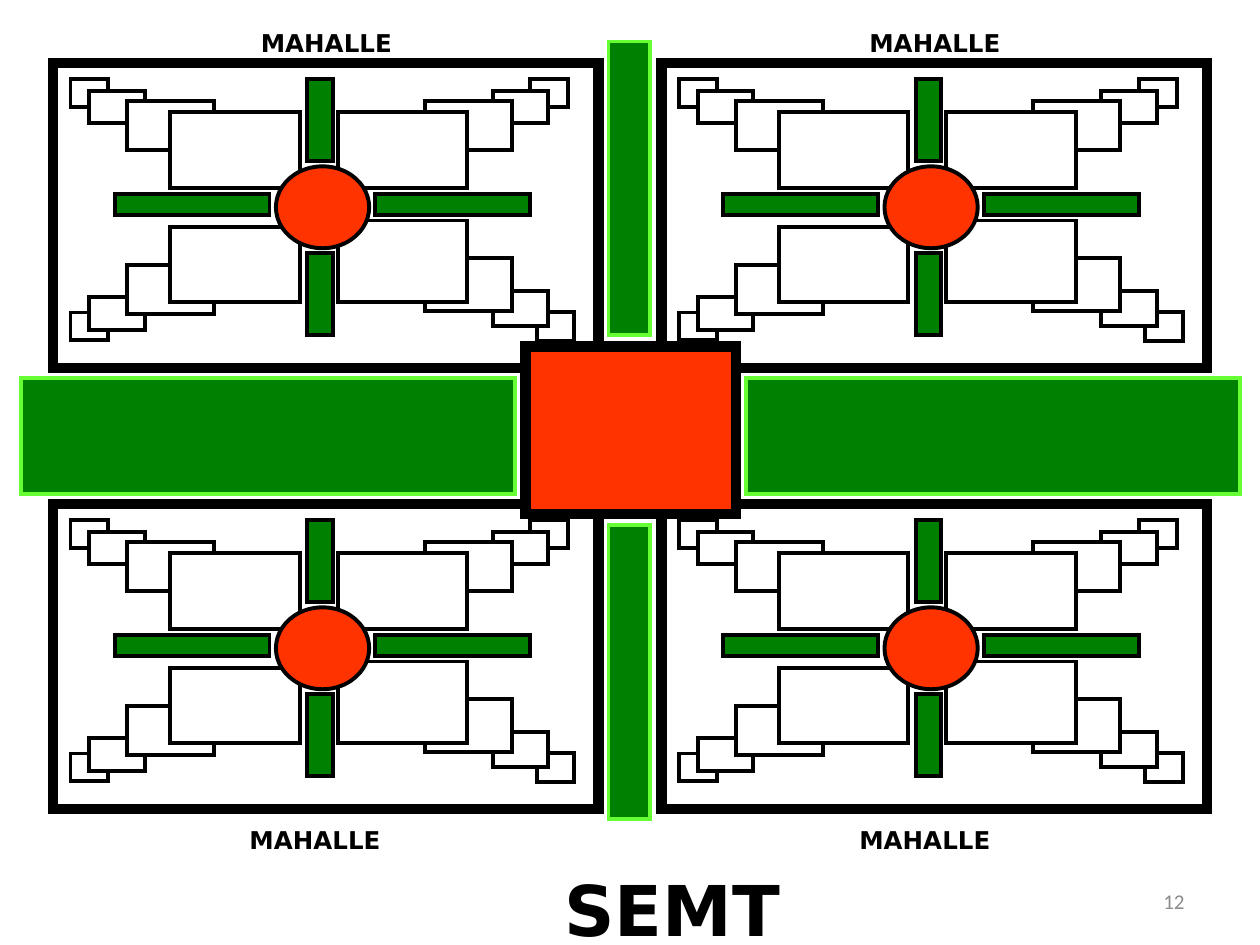
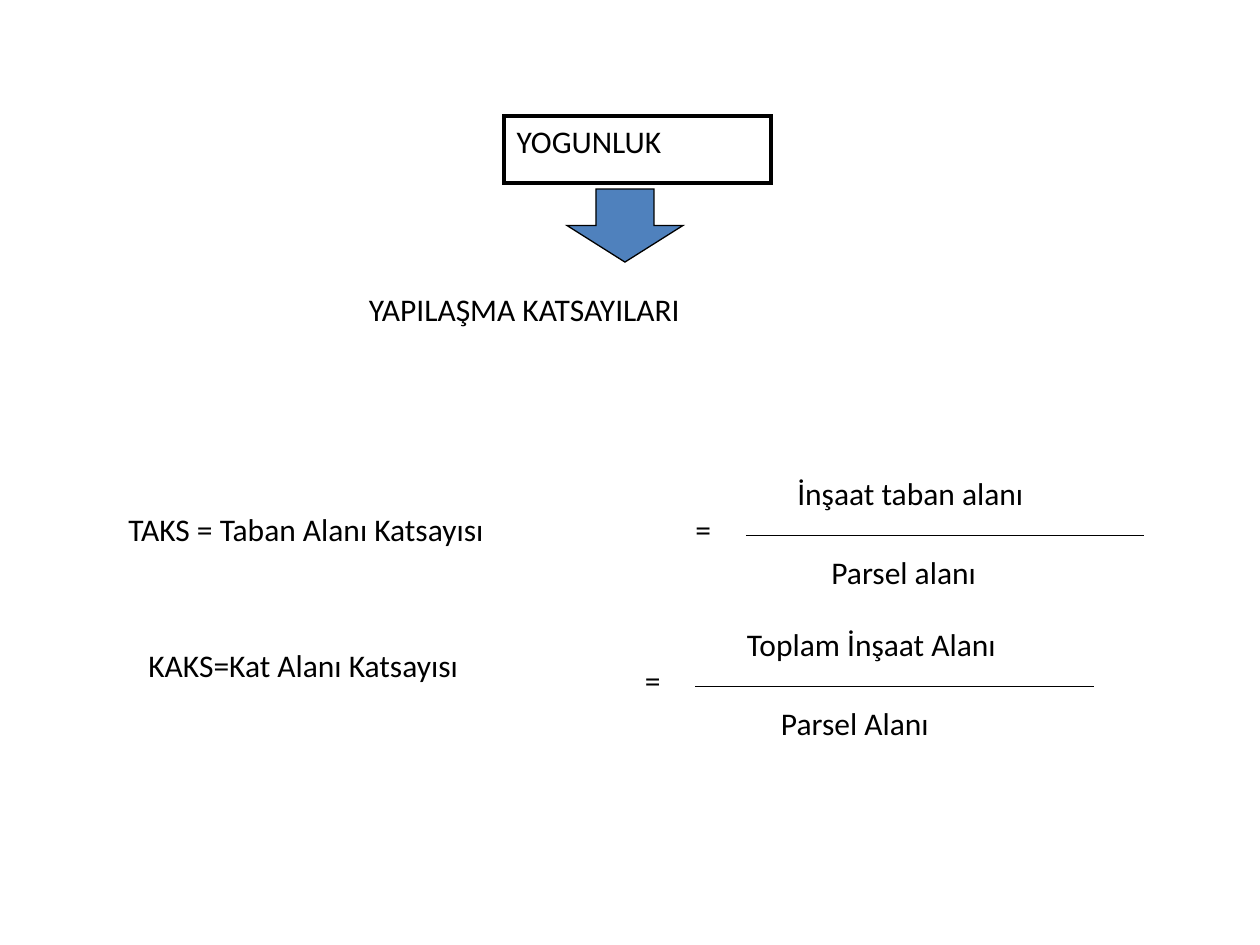
"""Build two planning slides: a district made of neighbourhoods, and building density ratios."""
from dataclasses import dataclass
from itertools import product

from pptx import Presentation
from pptx.dml.color import RGBColor
from pptx.enum.shapes import MSO_CONNECTOR, MSO_SHAPE
from pptx.enum.text import MSO_ANCHOR, MSO_AUTO_SIZE, PP_ALIGN
from pptx.oxml.ns import qn
from pptx.util import Inches, Pt


@dataclass(frozen=True)
class Theme:
    ink: RGBColor = RGBColor.from_string("000000")
    paper: RGBColor = RGBColor.from_string("FFFFFF")
    centre: RGBColor = RGBColor.from_string("FF3300")
    green: RGBColor = RGBColor.from_string("008000")
    green_edge: RGBColor = RGBColor.from_string("66FF33")
    arrow: RGBColor = RGBColor.from_string("4F81BD")
    muted: RGBColor = RGBColor.from_string("8C8C8C")
    body_font: str = "Calibri"
    map_font: str = "DejaVu Sans"
    district_size: int = 40
    label_size: int = 14
    body_size: int = 18
    number_size: int = 12
    hairline: float = 0.75
    outline: float = 2.25
    frame: float = 6


theme = Theme()


def draw(shapes, preset, at, fill, edge=theme.ink, weight=theme.outline):
    """Draw a preset shape with a sharp outline; a fill of None leaves it open."""
    shape = shapes.add_shape(preset, *map(Inches, at))
    shape.shadow.inherit = False
    if fill is None:
        shape.fill.background()
    else:
        shape.fill.solid()
        shape.fill.fore_color.rgb = fill
    shape.line.color.rgb = edge
    shape.line.width = Pt(weight)
    outline = shape._element.spPr.find(qn("a:ln"))
    outline.append(outline.makeelement(qn("a:miter"), {"lim": "800000"}))
    return shape


def write(box, at, text, size=theme.body_size, font=theme.body_font, bold=False,
          align=PP_ALIGN.LEFT, anchor=MSO_ANCHOR.TOP, color=theme.ink):
    """Place a text box or title and set its single paragraph."""
    box.left, box.top, box.width, box.height = map(Inches, at)
    frame = box.text_frame
    frame.text = text
    frame.word_wrap = True
    frame.auto_size = MSO_AUTO_SIZE.NONE
    frame.vertical_anchor = anchor
    paragraph = frame.paragraphs[0]
    paragraph.alignment = align
    paragraph.font.size = Pt(size)
    paragraph.font.name = font
    paragraph.font.bold = bold
    paragraph.font.color.rgb = color


prs = Presentation()
prs.slide_width, prs.slide_height = Inches(10), Inches(7.5)
title_only = prs.slide_layouts[5]

district = prs.slides.add_slide(title_only)
write(district.shapes.title, (1.25, 6.83, 8.17, 0.77), "SEMT", theme.district_size,
      theme.map_font, True, PP_ALIGN.CENTER)

blocks = [
    (0.56, 0.63, 0.3, 0.22), (0.71, 0.72, 0.44, 0.26), (1.01, 0.8, 0.69, 0.39), (1.35, 0.89, 1.03, 0.6),
    (4.21, 0.63, 0.3, 0.22), (3.91, 0.72, 0.44, 0.26), (3.37, 0.8, 0.69, 0.39), (2.68, 0.89, 1.03, 0.6),
    (0.56, 2.48, 0.3, 0.22), (0.71, 2.36, 0.44, 0.26), (1.01, 2.1, 0.69, 0.39), (1.35, 1.8, 1.03, 0.6),
    (4.26, 2.48, 0.3, 0.23), (3.91, 2.31, 0.44, 0.28), (3.37, 2.05, 0.69, 0.42), (2.68, 1.75, 1.03, 0.65),
]
paths = [(2.98, 1.54, 1.23, 0.17), (0.91, 1.54, 1.23, 0.17), (2.44, 0.63, 0.2, 0.65), (2.44, 2.01, 0.2, 0.65)]
neighbourhood = [
    *((MSO_SHAPE.RECTANGLE, at, theme.paper, theme.outline) for at in blocks),
    (MSO_SHAPE.OVAL, (2.19, 1.32, 0.74, 0.65), theme.centre, theme.outline),
    *((MSO_SHAPE.RECTANGLE, at, theme.green, theme.outline) for at in paths),
    (MSO_SHAPE.RECTANGLE, (0.42, 0.5, 4.33, 2.42), None, theme.frame),
]
for down, across in product((0, 3.5), (0, 4.83)):
    group = district.shapes.add_group_shape()
    for preset, (left, top, width, height), fill, weight in neighbourhood:
        draw(group.shapes, preset, (left + across, top + down, width, height), fill, weight=weight)

draw(district.shapes, MSO_SHAPE.RECTANGLE, (4.17, 2.75, 1.67, 1.33), theme.centre, weight=theme.frame)
for belt in [(5.92, 3, 3.92, 0.92), (0.17, 3, 3.92, 0.92), (4.83, 0.33, 0.33, 2.33), (4.83, 4.17, 0.33, 2.33)]:
    draw(district.shapes, MSO_SHAPE.RECTANGLE, belt, theme.green, theme.green_edge)

for left, top in [(0.55, 0.17), (5.38, 0.17), (5.3, 6.5), (0.46, 6.5)]:
    write(district.shapes.add_textbox(0, 0, 0, 0), (left, top, 4.08, 0.33), "MAHALLE",
          theme.label_size, theme.map_font, True, PP_ALIGN.CENTER)
write(district.shapes.add_textbox(0, 0, 0, 0), (7.17, 6.95, 2.33, 0.4), "12", theme.number_size,
      align=PP_ALIGN.RIGHT, anchor=MSO_ANCHOR.MIDDLE, color=theme.muted)

density = prs.slides.add_slide(title_only)
heading = density.shapes.title
write(heading, (4, 0.92, 2.12, 0.53), "YOGUNLUK")
heading.line.color.rgb = theme.ink
heading.line.width = Pt(theme.outline)
heading_outline = heading._element.spPr.find(qn("a:ln"))
heading_outline.append(heading_outline.makeelement(qn("a:miter"), {"lim": "800000"}))
draw(density.shapes, MSO_SHAPE.DOWN_ARROW, (4.5, 1.5, 0.92, 0.58), theme.arrow, weight=theme.hairline)

statements = [
    ("YAPILAŞMA KATSAYILARI", 2.83, 2.25, 4.48),
    ("TAKS = Taban Alanı Katsayısı", 0.92, 4, 4.4),
    ("KAKS=Kat Alanı Katsayısı", 1.08, 5.08, 3.93),
]
ratios = [
    ("İnşaat taban alanı", "Parsel alanı", 5.42, 4),
    ("Toplam İnşaat Alanı", "Parsel Alanı", 5.02, 5.2),
]
for numerator, denominator, left, top in ratios:
    statements += [
        ("=", left, top, 0.39),
        (numerator, left + 0.81, top - 0.29, 2.94),
        (denominator, left + 1.08, top + 0.34, 1.84),
    ]
    bar = density.shapes.add_connector(MSO_CONNECTOR.STRAIGHT, Inches(left + 0.5), Inches(top + 0.25),
                                       Inches(left + 3.66), Inches(top + 0.25))
    bar.line.color.rgb = theme.ink
    bar.line.width = Pt(theme.hairline)
    properties = bar._element.spPr
    properties.append(properties.makeelement(qn("a:effectLst"), {}))
for text, left, top, width in statements:
    write(density.shapes.add_textbox(0, 0, 0, 0), (left, top, width, 0.5), text)

prs.save("out.pptx")
